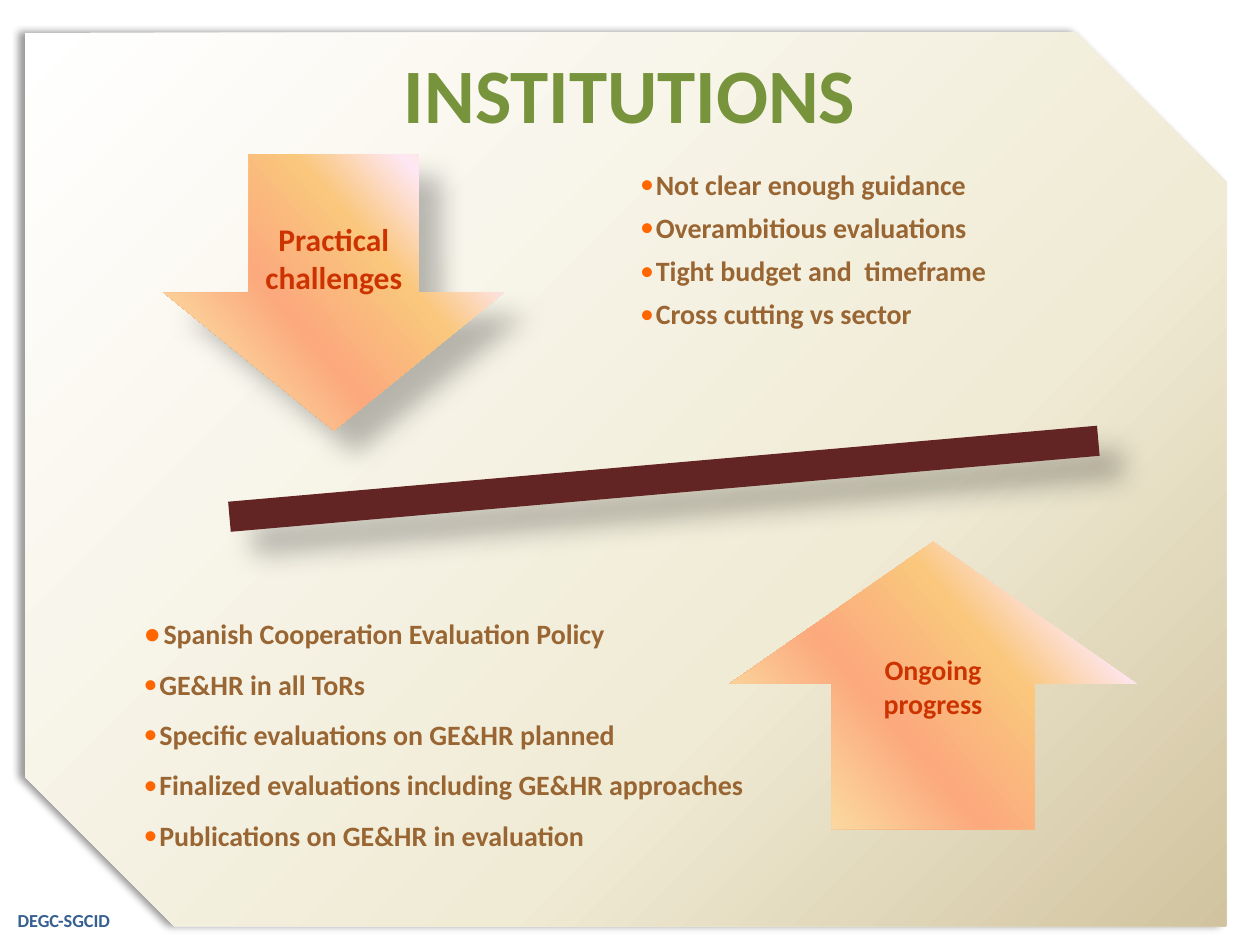
from lxml.etree import SubElement
from pptx import Presentation
from pptx.dml.color import RGBColor
from pptx.enum.shapes import MSO_SHAPE
from pptx.enum.text import MSO_ANCHOR, PP_ALIGN
from pptx.oxml.ns import qn
from pptx.util import Pt

PANEL_STOPS = [(0, "FFFFFF"), (65, "F0EBD5"), (100, "D1C39F")]
ARROW_STOPS = [(0, "FBEAC7"), (18, "FEE7F2"), (36, "FAC77D"),
               (61, "FBA97D"), (82, "FBD49C"), (100, "FEE7F2")]
SOFT_SHADOW = ("000000", 26, 15, 18, 45)
CHALLENGES = ["Not clear enough guidance", "Overambitious evaluations",
              "Tight budget and  timeframe", "Cross cutting vs sector"]
PROGRESS = ["Spanish Cooperation Evaluation Policy", "GE&HR in all ToRs",
            "Specific evaluations on GE&HR planned",
            "Finalized evaluations including GE&HR approaches",
            "Publications on GE&HR in evaluation"]


def color(value):
    """Return the colour for a hex string."""
    return RGBColor.from_string(value)


def apply(target, values):
    """Set every attribute named in a dict of values."""
    for name, value in values.items():
        setattr(target, name, value)


def add_element(parent, tag, **attributes):
    """Append a DrawingML element with the given attributes."""
    values = {name: str(value) for name, value in attributes.items()}
    return SubElement(parent, qn(f"a:{tag}"), values)


def fill_gradient(shape, stops, angle):
    """Fill a shape with a linear gradient of many stops."""
    shape.fill.gradient()
    gradient = shape._element.spPr.find(qn("a:gradFill"))
    for child in list(gradient):
        gradient.remove(child)
    stop_list = add_element(gradient, "gsLst")
    for position, value in stops:
        stop = add_element(stop_list, "gs", pos=position * 1000)
        add_element(stop, "srgbClr", val=value)
    add_element(gradient, "lin", ang=angle * 60000, scaled=0)


def add_shadow(shape, value, opacity, blur, distance, direction):
    """Give a shape an outer shadow."""
    effects = shape._element.spPr.find(qn("a:effectLst"))
    shadow = add_element(effects, "outerShdw", blurRad=Pt(blur), dist=Pt(distance),
                         dir=direction * 60000, algn="ctr", rotWithShape=0)
    shade = add_element(shadow, "srgbClr", val=value)
    add_element(shade, "alpha", val=opacity * 1000)


def add_plain_shape(slide, kind, box, adjustments=(), shadow=None):
    """Add a preset shape without outline."""
    shape = slide.shapes.add_shape(kind, *map(Pt, box))
    for index, value in enumerate(adjustments):
        shape.adjustments[index] = value
    shape.line.fill.background()
    shape.shadow.inherit = False
    if shadow:
        add_shadow(shape, *shadow)
    return shape


def write_paragraph(paragraph, text, size, value, layout):
    """Write one bold paragraph."""
    apply(paragraph, layout)
    run = paragraph.add_run()
    run.text = text
    apply(run.font, {"name": "Calibri", "size": Pt(size), "bold": True})
    run.font.color.rgb = color(value)


def add_label(slide, box, text, size, value, alignment):
    """Add a text box of one line."""
    frame = slide.shapes.add_textbox(*map(Pt, box)).text_frame
    frame.word_wrap = True
    write_paragraph(frame.paragraphs[0], text, size, value, {"alignment": alignment})


def add_arrow(slide, kind, box, adjustments, text, size, frame_values, shadow=None):
    """Add a gradient block arrow with a centred caption."""
    shape = add_plain_shape(slide, kind, box, adjustments, shadow)
    fill_gradient(shape, ARROW_STOPS, 139)
    apply(shape.text_frame, {"word_wrap": True, **frame_values})
    write_paragraph(shape.text_frame.paragraphs[0], text, size, "CC3300",
                    {"alignment": PP_ALIGN.CENTER})


def add_bullet(paragraph, indent, scale):
    """Give a paragraph an orange hanging bullet."""
    properties = paragraph._p.get_or_add_pPr()
    properties.set("marL", str(Pt(indent)))
    properties.set("indent", str(-Pt(indent)))
    add_element(add_element(properties, "buClr"), "srgbClr", val="FF6600")
    add_element(properties, "buSzPct", val=scale * 1000)
    add_element(properties, "buFont", typeface="Calibri")
    add_element(properties, "buChar", char="•")


def add_bullet_list(slide, box, items, layout, first_bullet=(9, 100)):
    """Add a bulleted list whose first bullet may differ."""
    frame = slide.shapes.add_textbox(*map(Pt, box)).text_frame
    margins = ("margin_left", "margin_top", "margin_right", "margin_bottom")
    apply(frame, {"word_wrap": True, **dict.fromkeys(margins, 0)})
    for index, item in enumerate(items):
        paragraph = frame.add_paragraph() if index else frame.paragraphs[0]
        add_bullet(paragraph, *((9, 100) if index else first_bullet))
        write_paragraph(paragraph, item, 16, "996633", layout)


def main():
    """Build the slide and save it."""
    presentation = Presentation()
    apply(presentation, {"slide_width": Pt(720), "slide_height": Pt(540)})
    slide = presentation.slides.add_slide(presentation.slide_layouts[6])

    add_label(slide, (3, 516, 79, 20), "DEGC-SGCID", 10.5, "376092", PP_ALIGN.LEFT)
    panel = add_plain_shape(slide, MSO_SHAPE.SNIP_2_DIAG_RECTANGLE,
                            (14.4, 18.7, 686.2, 510.5), (0, 0.167),
                            ("000000", 40, 4, 3, 180))
    fill_gradient(panel, PANEL_STOPS, 45)
    add_label(slide, (36, 23, 648, 90), "INSTITUTIONS", 44, "77933C", PP_ALIGN.CENTER)

    add_arrow(slide, MSO_SHAPE.UP_ARROW, (416.9, 309.6, 232.6, 164.2), (0.5, 0.494),
              "Ongoing progress", 16,
              {"vertical_anchor": MSO_ANCHOR.TOP, "margin_top": Pt(23)})
    add_arrow(slide, MSO_SHAPE.DOWN_ARROW, (93.6, 88.4, 194.4, 157.7), (),
              "Practical challenges", 18,
              {"vertical_anchor": MSO_ANCHOR.MIDDLE}, SOFT_SHADOW)
    add_bullet_list(slide, (365.8, 95.6, 280, 105), CHALLENGES,
                    {"space_after": Pt(5.5)})

    beam = add_plain_shape(slide, MSO_SHAPE.MATH_MINUS, (40.3, 236.9, 678.2, 73.4),
                           shadow=SOFT_SHADOW)
    beam.rotation = 355
    beam.fill.solid()
    beam.fill.fore_color.rgb = color("632523")
    add_bullet_list(slide, (82.1, 343, 360, 150), PROGRESS,
                    {"line_spacing": 1.5}, (11.4, 125))

    presentation.save("out.pptx")


if __name__ == "__main__":
    main()
